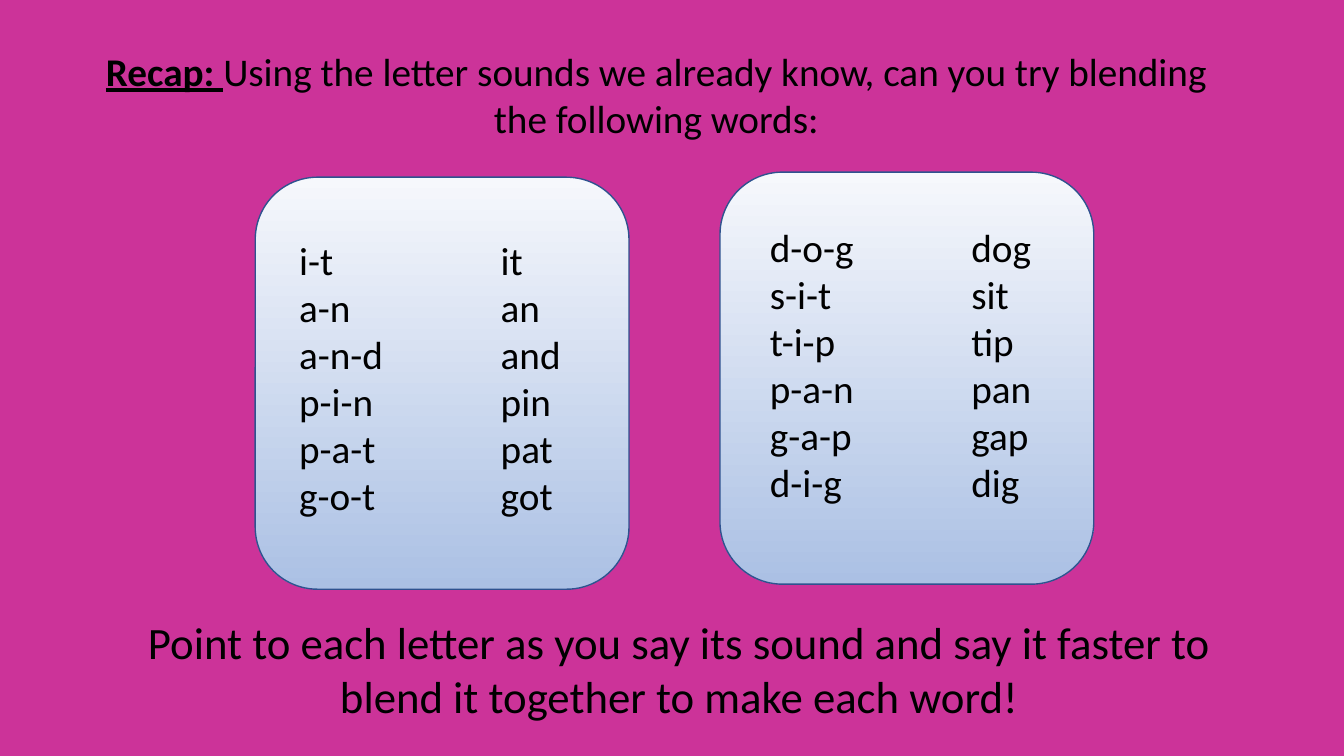
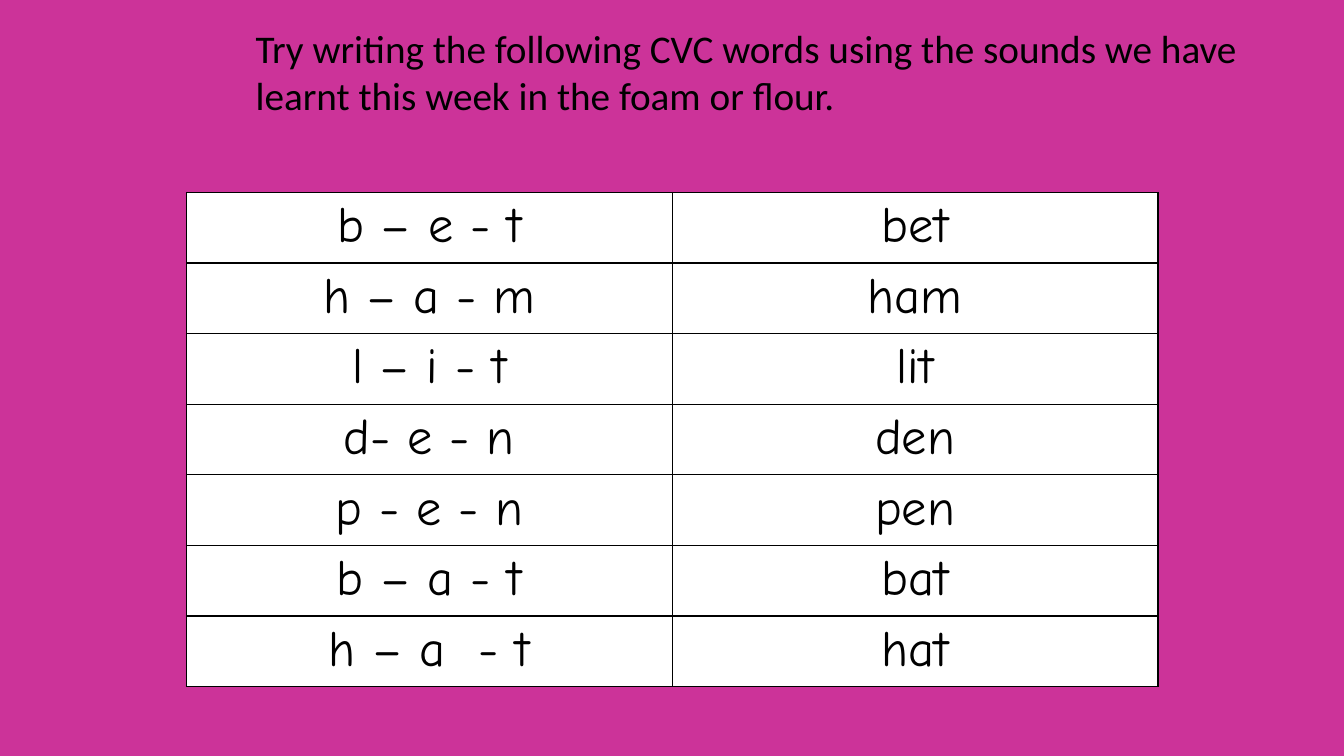
"""Build two phonics slides: a blending recap and a table of CVC words to write."""
from lxml import etree
from pptx import Presentation
from pptx.dml.color import RGBColor
from pptx.enum.shapes import MSO_SHAPE
from pptx.enum.text import PP_ALIGN
from pptx.oxml.ns import qn
from pptx.util import Pt

ROUNDED = MSO_SHAPE.ROUNDED_RECTANGLE
LEFT, CENTER = PP_ALIGN.LEFT, PP_ALIGN.CENTER
PINK, BLACK, WHITE = "CC3399", "000000", "FFFFFF"
PANEL_TOP, PANEL_BOTTOM, PANEL_EDGE = "F6F8FC", "ABC0E4", "2F528F"


def color(value):
    return RGBColor.from_string(value)


def add_text(slide, left, top, width, height, lines, size=28, align=LEFT, tab=None):
    frame = slide.shapes.add_textbox(Pt(left), Pt(top), Pt(width), Pt(height)).text_frame
    frame.word_wrap = True
    frame.text = "\n".join(lines)
    for paragraph in frame.paragraphs:
        paragraph.alignment = align
        if tab:
            stops = etree.SubElement(paragraph._p.get_or_add_pPr(), qn("a:tabLst"))
            etree.SubElement(stops, qn("a:tab"), pos=str(Pt(tab)), algn="l")
        paragraph.font.size = Pt(size)
        paragraph.font.name = "Calibri"
        paragraph.font.color.rgb = color(BLACK)
    return frame


prs = Presentation()
prs.slide_width, prs.slide_height = Pt(960), Pt(540)
recap, writing = [prs.slides.add_slide(prs.slide_layouts[6]) for _ in range(2)]
for slide in (recap, writing):
    slide.background.fill.solid()
    slide.background.fill.fore_color.rgb = color(PINK)

question = add_text(recap, 54, 30, 829.5, 75, ["Recap: "], align=CENTER).paragraphs[0]
question.runs[0].font.bold = True
question.runs[0].font.underline = True
question.add_run().text = ("Using the letter sounds we already know, "
                           "can you try blending the following words:")

word_lists = [
    (182.3, 126.6, 206.6, 165,
     [("i-t", "it"), ("a-n", "an"), ("a-n-d", "and"),
      ("p-i-n", "pin"), ("p-a-t", "pat"), ("g-o-t", "got")]),
    (514.3, 123, 542.8, 155.8,
     [("d-o-g", "dog"), ("s-i-t", "sit"), ("t-i-p", "tip"),
      ("p-a-n", "pan"), ("g-a-p", "gap"), ("d-i-g", "dig")]),
]
for panel_left, panel_top, words_left, words_top, words in word_lists:
    panel = recap.shapes.add_shape(ROUNDED, Pt(panel_left), Pt(panel_top), Pt(267), Pt(294.3))
    panel.shadow.inherit = False
    panel.fill.gradient()
    panel.fill.gradient_angle = 270
    for stop, shade in zip(panel.fill.gradient_stops, (PANEL_TOP, PANEL_BOTTOM)):
        stop.color.rgb = color(shade)
    panel.line.color.rgb = color(PANEL_EDGE)
    panel.line.width = Pt(1)
    add_text(recap, words_left, words_top, 267, 211,
             ["\t".join(pair) for pair in words], tab=144)

add_text(recap, 70.5, 435.6, 829.5, 85,
         ["Point to each letter as you say its sound and say it faster to blend it "
          "together to make each word!"], size=32, align=CENTER)

add_text(writing, 175.5, 13.7, 725, 75,
         ["Try writing the following CVC words using the sounds we have learnt this "
          "week in the foam or flour."])

cvc_words = [
    ("b – e - t", "bet"),
    ("h – a - m", "ham"),
    ("l – i - t", "lit"),
    ("d- e - n", "den"),
    ("p - e - n", "pen"),
    ("b – a - t", "bat"),
    ("h – a  - t", "hat"),
]
cvc_table = writing.shapes.add_table(
    len(cvc_words), 2, Pt(133.2), Pt(137.4), Pt(694), Pt(352.8)).table
cvc_table.first_row = False
cvc_table.horz_banding = False
for row, pair in zip(cvc_table.rows, cvc_words):
    row.height = Pt(50.4)
    for cell, word in zip(row.cells, pair):
        properties = cell._tc.get_or_add_tcPr()
        for side in ("a:lnL", "a:lnR", "a:lnT", "a:lnB"):
            border = etree.SubElement(properties, qn(side), w=str(Pt(1)))
            border_fill = etree.SubElement(border, qn("a:solidFill"))
            etree.SubElement(border_fill, qn("a:srgbClr"), val=BLACK)
        cell.fill.solid()
        cell.fill.fore_color.rgb = color(WHITE)
        cell.text = word
        paragraph = cell.text_frame.paragraphs[0]
        paragraph.alignment = CENTER
        paragraph.font.size = Pt(36)
        paragraph.font.name = "Comic Neue"
        paragraph.font.color.rgb = color(BLACK)

prs.save("out.pptx")
